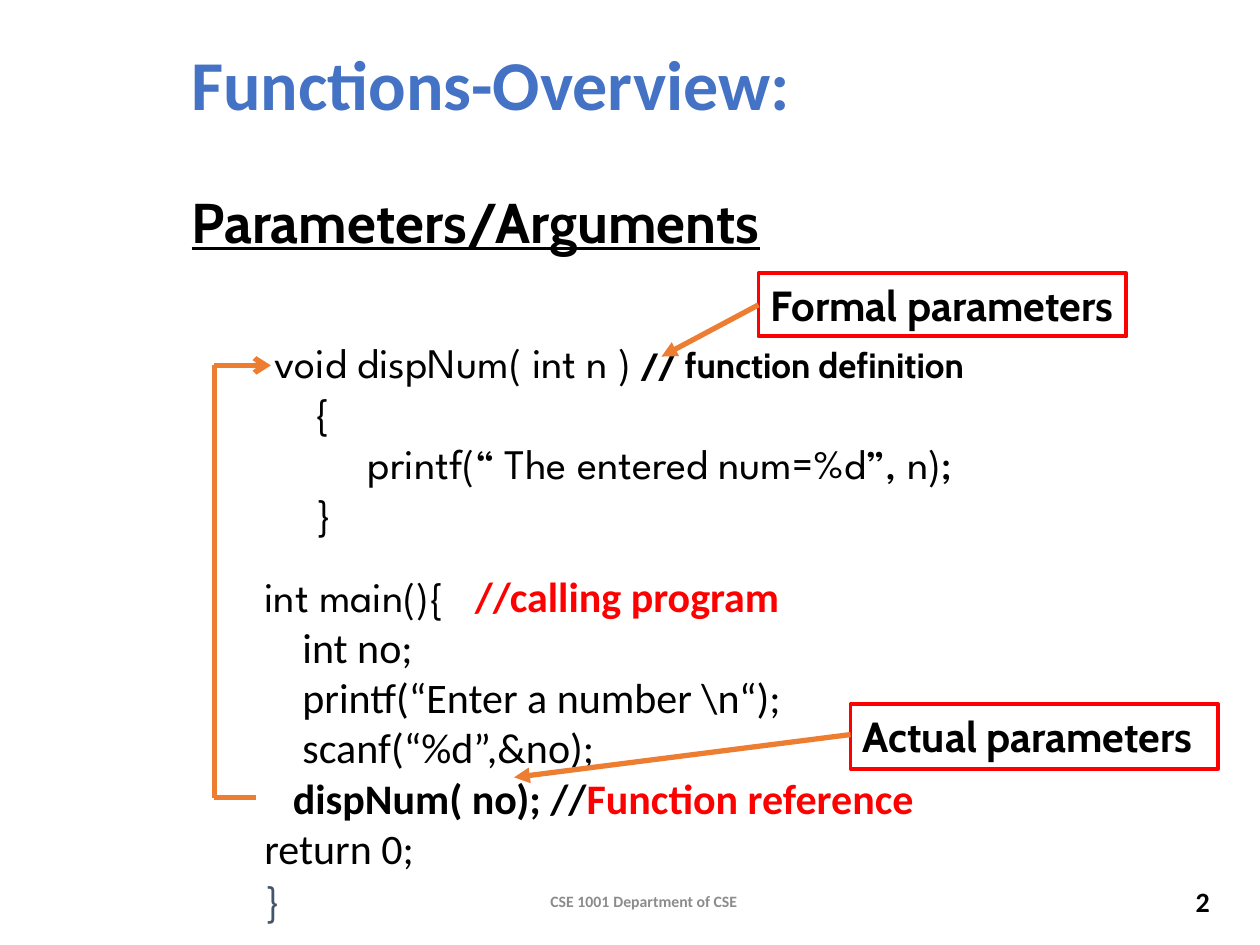
from dataclasses import dataclass
from itertools import pairwise
from typing import Any, Optional

from lxml import etree
from pptx import Presentation
from pptx.dml.color import RGBColor
from pptx.enum.shapes import MSO_CONNECTOR, MSO_SHAPE
from pptx.enum.text import MSO_ANCHOR, MSO_AUTO_SIZE, PP_ALIGN
from pptx.oxml.ns import qn
from pptx.util import Inches, Pt

STRAIGHT = MSO_CONNECTOR.STRAIGHT
RECTANGLE = MSO_SHAPE.RECTANGLE
TOP, MIDDLE = MSO_ANCHOR.TOP, MSO_ANCHOR.MIDDLE
GROW = MSO_AUTO_SIZE.SHAPE_TO_FIT_TEXT
LEFT, RIGHT = PP_ALIGN.LEFT, PP_ALIGN.RIGHT

Point = tuple[float, float]
Box = tuple[float, float, float, float]


@dataclass(frozen=True)
class Theme:
    black: str = "000000"
    red: str = "FF0000"
    orange: str = "ED7D31"
    blue: str = "4472C4"
    slate: str = "44546A"
    grey: str = "8C8C8C"
    sans: str = "Calibri"
    label: str = "Cabin"
    code: str = "League Spartan"
    heading_size: int = 40
    title_size: int = 32
    code_size: int = 24
    comment_size: int = 20
    number_size: int = 16
    footer_size: int = 9
    arrow_width: float = 3
    frame_width: float = 2.25


THEME = Theme()


@dataclass(frozen=True)
class Run:
    text: str
    font: str = THEME.sans
    size: int = THEME.code_size
    color: str = THEME.black
    bold: bool = False
    underline: bool = False


@dataclass(frozen=True)
class Line:
    runs: list[Run]
    align: PP_ALIGN = LEFT
    indent: float = 0
    tab: Optional[float] = None


@dataclass(frozen=True)
class Callout:
    text: str
    box: Box
    start: Point
    end: Point


def code(text: str, **style: Any) -> Line:
    return Line([Run(text, **style)])


def write(tf: Any, lines: list[Line], anchor: MSO_ANCHOR = TOP) -> None:
    tf.word_wrap = True
    tf.vertical_anchor = anchor
    for i, line in enumerate(lines):
        p = tf.add_paragraph() if i else tf.paragraphs[0]
        p.alignment = line.align
        pPr = p._p.get_or_add_pPr()
        if line.indent:
            pPr.set("marL", str(Inches(line.indent)))
            pPr.set("indent", "0")
        if line.tab is not None:
            tabs = etree.SubElement(pPr, qn("a:tabLst"))
            etree.SubElement(tabs, qn("a:tab"), pos=str(Inches(line.tab)), algn="l")
        for run in line.runs:
            r = p.add_run()
            r.text = run.text
            r.font.name = run.font
            r.font.size = Pt(run.size)
            r.font.bold = run.bold
            r.font.underline = run.underline
            r.font.color.rgb = RGBColor.from_string(run.color)


def add_text(shapes: Any, box: Box, lines: list[Line], anchor: MSO_ANCHOR = TOP) -> Any:
    sp = shapes.add_textbox(*map(Inches, box))
    write(sp.text_frame, lines, anchor)
    return sp


def add_code(shapes: Any, box: Box, lines: list[Line]) -> None:
    add_text(shapes, box, lines).text_frame.auto_size = GROW


def add_line(shapes: Any, start: Point, end: Point, head: Optional[str] = None) -> None:
    cxn = shapes.add_connector(STRAIGHT, *map(Inches, start + end))
    cxn.line.color.rgb = RGBColor.from_string(THEME.orange)
    cxn.line.width = Pt(THEME.arrow_width)
    if head:
        etree.SubElement(cxn.line._get_or_add_ln(), qn("a:tailEnd"), type=head)
    etree.SubElement(cxn._element.spPr, qn("a:effectLst"))


def add_callout(shapes: Any, callout: Callout) -> None:
    sp = shapes.add_shape(RECTANGLE, *map(Inches, callout.box))
    sp.shadow.inherit = False
    sp.fill.background()
    sp.line.color.rgb = RGBColor.from_string(THEME.red)
    sp.line.width = Pt(THEME.frame_width)
    write(sp.text_frame, [code(callout.text, font=THEME.label, bold=True)])
    sp.text_frame.auto_size = GROW
    add_line(shapes, callout.start, callout.end, "triangle")


DEFINITION = [
    Line([
        Run("void dispNum( int n )", THEME.code),
        Run(" ", THEME.code, THEME.comment_size),
        Run("// function definition", THEME.label, THEME.comment_size, bold=True),
    ]),
    code("    {", font=THEME.code),
    code("         printf(“ The entered num=%d”, n);", font=THEME.code),
    code("    }", font=THEME.code),
]

CALLER = [
    Line([
        Run("int main(){\t", THEME.code),
        Run("//calling program", color=THEME.red, bold=True),
    ], tab=1.67),
    code("    int no;"),
    code("    printf(“Enter a number \\n“);"),
    code("    scanf(“%d”,&no);"),
    Line([
        Run("   dispNum( no); //", bold=True),
        Run("Function reference", color=THEME.red, bold=True),
    ]),
    code("return 0;"),
    code("}", font=THEME.code, color=THEME.slate),
]

CALL_PATH = [(2.03, 6.33), (1.7, 6.33), (1.7, 2.9), (2.15, 2.9)]

CALLOUTS = [
    Callout("Formal parameters", (6.02, 2.17, 2.92, 0.5), (6.02, 2.42), (5.25, 2.83)),
    Callout("Actual parameters", (6.75, 5.59, 2.92, 0.51), (6.75, 5.83), (4.08, 6.17)),
]


def main() -> None:
    prs = Presentation()
    prs.slide_width, prs.slide_height = Inches(10), Inches(7.5)
    s = prs.slides.add_slide(prs.slide_layouts[5])
    shapes = s.shapes

    title = shapes.title
    title.left, title.top, title.width, title.height = map(Inches, (1.42, 1.41, 7.83, 0.75))
    write(title.text_frame, [code("Parameters/Arguments", font=THEME.label,
                                  size=THEME.title_size, bold=True, underline=True)], MIDDLE)
    title.text_frame.paragraphs[0].line_spacing = 0.9

    footer = Run("CSE 1001\tDepartment of CSE", size=THEME.footer_size,
                 color=THEME.grey, bold=True)
    add_text(shapes, (1.81, 6.95, 7.2, 0.4), [Line([footer], indent=2.46, tab=3.55)], MIDDLE)
    number = Run("2", size=THEME.number_size, bold=True)
    add_text(shapes, (9.31, 6.95, 0.39, 0.4), [Line([number], RIGHT)], MIDDLE)

    bracket = shapes.add_group_shape()
    for start, end in pairwise(CALL_PATH):
        add_line(bracket.shapes, start, end, "arrow" if end == CALL_PATH[-1] else None)

    add_code(shapes, (2.08, 2.62, 7.67, 1.72), DEFINITION)
    add_code(shapes, (2, 4.48, 7.42, 2.93), CALLER)
    for callout in CALLOUTS:
        add_callout(shapes, callout)

    heading = code("Functions-Overview:", size=THEME.heading_size, color=THEME.blue, bold=True)
    add_text(shapes, (1.42, 0.28, 6.5, 0.75), [heading], MIDDLE)

    prs.save("out.pptx")


if __name__ == "__main__":
    main()
